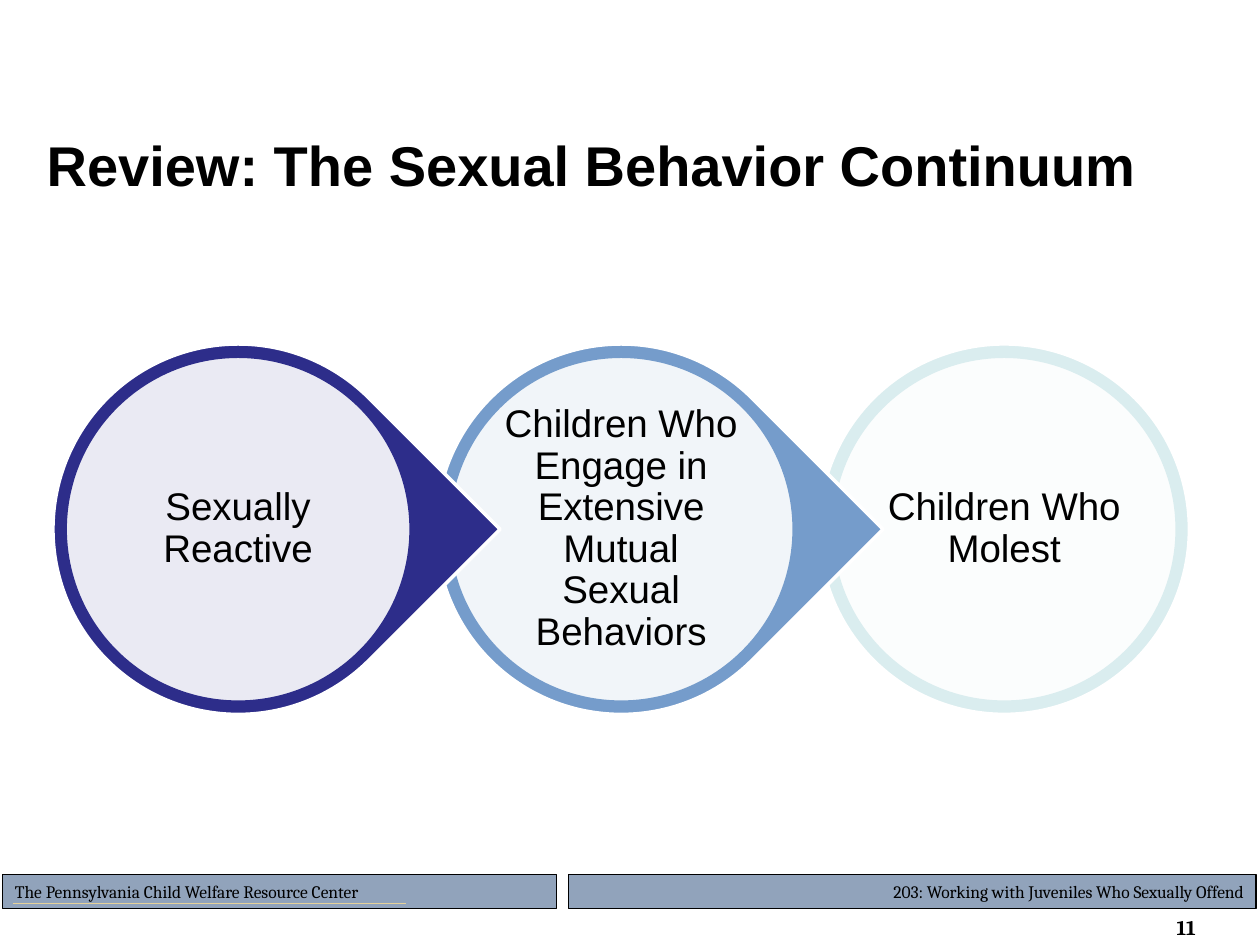
import pptx
import pptx.util
import pptx.dml.color
import pptx.enum.shapes
import pptx.enum.text
import pptx.oxml.ns
from lxml import etree

COLORS = {
    "ink": "000000", "white": "FFFFFF", "bar": "91A3BB", "rule": "E5D199",
    "navy": "2D2D8A", "blue": "759CCB", "mint": "DAEDEF",
}
COLUMNS, ROWS = 100, 75
SHAPES = pptx.enum.shapes.MSO_SHAPE
ANCHOR = pptx.enum.text.MSO_ANCHOR
ALIGN = pptx.enum.text.PP_ALIGN


class SlideBuilder:
    """Style and current slide; lengths are grid columns and rows."""

    def __init__(self, deck):
        self.column = deck.slide_width / COLUMNS
        self.row = deck.slide_height / ROWS
        self.page = deck.slides.add_slide(deck.slide_layouts[5])

    def area(self, left, top, width, height):
        return (round(left * self.column), round(top * self.row),
                round(width * self.column), round(height * self.row))

    def color(self, name):
        return pptx.dml.color.RGBColor.from_string(COLORS[name])

    def set_text(self, box, text, size, font="Arial", align=ALIGN.LEFT,
                 anchor=ANCHOR.MIDDLE, bold=False, inset=None, spacing=None):
        frame = box.text_frame
        frame.word_wrap = True
        frame.auto_size = pptx.enum.text.MSO_AUTO_SIZE.NONE
        frame.vertical_anchor = anchor
        if inset is not None:
            margin = pptx.util.Inches(inset)
            frame.margin_left = frame.margin_right = margin
            frame.margin_top = frame.margin_bottom = margin
        frame.text = text
        para = frame.paragraphs[0]
        para.alignment = align
        para.line_spacing = spacing
        para.font.name = font
        para.font.size = pptx.util.Pt(size)
        para.font.bold = bold
        para.font.color.rgb = self.color("ink")

    def title(self, text, *area):
        box = self.page.shapes.title
        box.left, box.top, box.width, box.height = self.area(*area)
        self.set_text(box, text, 32, bold=True)

    def shape(self, kind, area, fill, line, weight, opacity=None):
        shape = self.page.shapes.add_shape(kind, *self.area(*area))
        shape.shadow.inherit = False
        shape.fill.solid()
        shape.fill.fore_color.rgb = self.color(fill)
        shape.line.color.rgb = self.color(line)
        shape.line.width = pptx.util.Pt(weight)
        if opacity is not None:
            tint = shape._element.spPr.find(
                pptx.oxml.ns.qn("a:solidFill"))[0]
            alpha = etree.SubElement(tint, pptx.oxml.ns.qn("a:alpha"))
            alpha.set("val", str(opacity * 1000))
        return shape

    def text(self, text, area, size, **style):
        box = self.page.shapes.add_textbox(*self.area(*area))
        self.set_text(box, text, size, **style)

    def rule(self, left, right, top, color):
        x, y, width, _ = self.area(left, top, right - left, 0)
        line = self.page.shapes.add_connector(
            pptx.enum.shapes.MSO_CONNECTOR.STRAIGHT, x, y, x + width, y)
        line.line.color.rgb = self.color(color)
        line.line.width = pptx.util.Pt(0.75)
        etree.SubElement(line._element.spPr, pptx.oxml.ns.qn("a:effectLst"))

    def footer_bar(self, text, left, width, weight, align):
        bar = self.shape(SHAPES.RECTANGLE, (left, 69.4, width, 2.7),
                         "bar", "ink", weight)
        self.set_text(bar, text, 10, "Cambria", align, ANCHOR.TOP)

    def stage(self, text, left, color, pointed):
        """A ring with a pale disc and label; a pointed ring leads onward."""
        top, size = 27.3, 29.4

        def inner(gap):
            return left + gap, top + gap, size - 2 * gap, size - 2 * gap

        kind = SHAPES.TEAR if pointed else SHAPES.OVAL
        ring = self.shape(kind, inner(0), color, "white", 2)
        if pointed:
            ring.adjustments[0] = 1
            ring.rotation = 45
        self.shape(SHAPES.OVAL, inner(0.97), "white", color, 2, opacity=90)
        self.text(text, inner(4.9), 22, align=ALIGN.CENTER,
                  inset=0.03, spacing=0.9)


def main():
    deck = pptx.Presentation()
    deck.slide_width = pptx.util.Inches(10)
    deck.slide_height = pptx.util.Inches(7.5)
    slide = SlideBuilder(deck)

    # Title
    slide.title("Review: The Sexual Behavior Continuum", 2.7, 9.2, 91.7, 7.7)

    # Footer bars and page number
    slide.footer_bar("203: Working with Juveniles Who Sexually Offend",
                     45.1, 54.6, 0.75, ALIGN.RIGHT)
    slide.footer_bar("The Pennsylvania Child Welfare Resource Center",
                     0.2, 44, 0.5, ALIGN.LEFT)
    slide.rule(1, 32.2, 71.7, "rule")
    slide.text("11", (88.1, 72.1, 7.8, 3), 12, font="Cambria",
               align=ALIGN.RIGHT, anchor=ANCHOR.TOP, bold=True)

    # Continuum, drawn from the last stage so each point overlaps the next ring
    stages = [
        ("Sexually Reactive", "navy"),
        ("Children Who Engage in Extensive Mutual Sexual Behaviors", "blue"),
        ("Children Who Molest", "mint"),
    ]
    last = len(stages) - 1
    for index, (text, color) in reversed(list(enumerate(stages))):
        slide.stage(text, 4.2 + 30.4 * index, color, pointed=index < last)

    deck.save("out.pptx")


if __name__ == "__main__":
    main()
